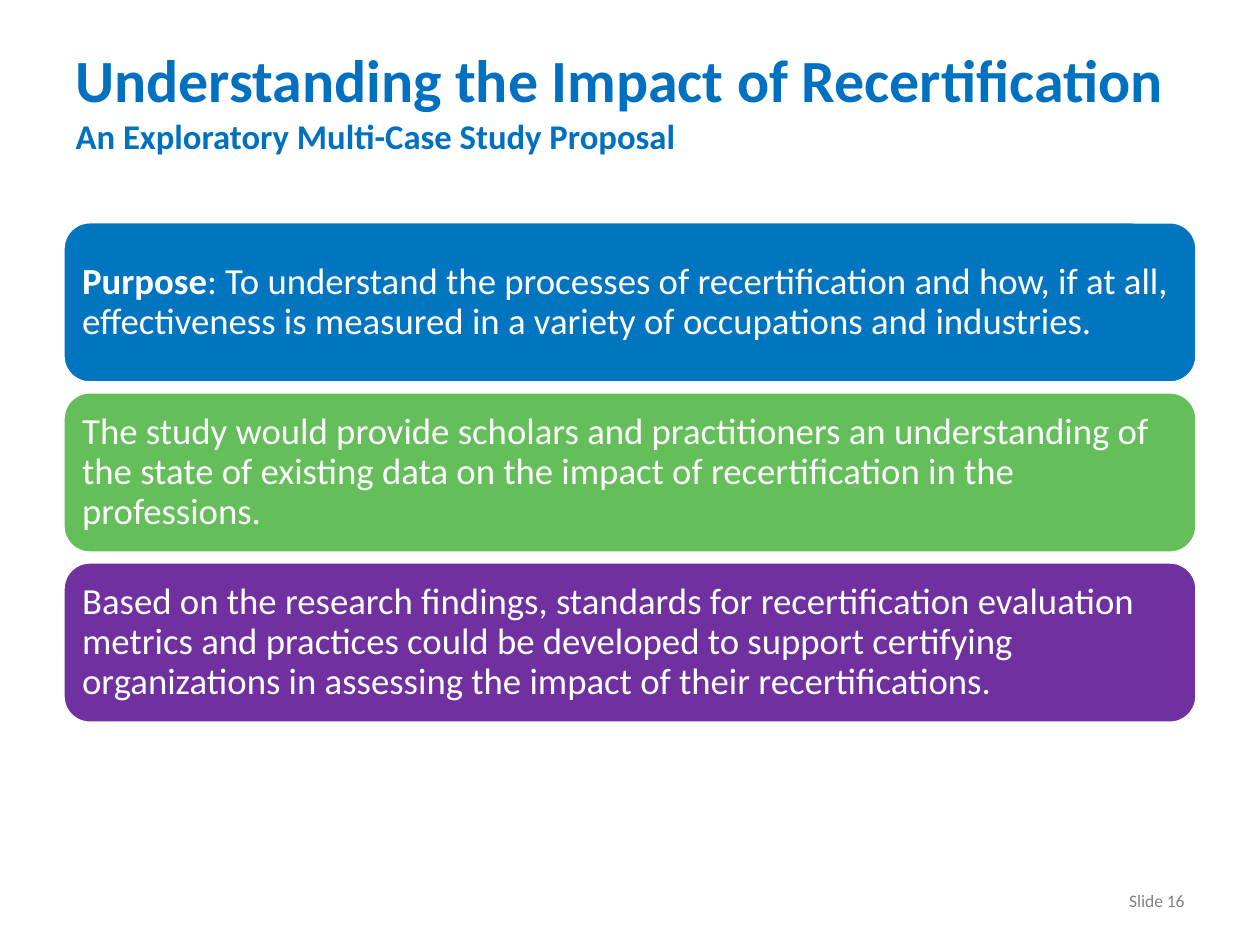
"""Build the slide that proposes a multi-case study of recertification."""
import pptx
import pptx.dml.color
import pptx.enum.shapes
import pptx.enum.text
import pptx.util

Inches = pptx.util.Inches
Anchor = pptx.enum.text.MSO_ANCHOR
Align = pptx.enum.text.PP_ALIGN

COLORS = {"title": "0070C0", "number": "808080", "white": "FFFFFF",
          "purpose": "0175C0", "understanding": "64BE5A", "standards": "7030A0"}

PANELS = [
    ("purpose", [
        ("Purpose", True),
        (": To understand the processes of recertification and how, if at all, "
         "effectiveness is measured in a variety of occupations and industries.", False)]),
    ("understanding", [
        ("The study would provide scholars and practitioners an understanding of "
         "the state of existing data on the impact of recertification in the "
         "professions.", False)]),
    ("standards", [
        ("Based on the research findings, standards for recertification evaluation "
         "metrics and practices could be developed to support certifying "
         "organizations in assessing the impact of their recertifications.", False)]),
]
PANEL_TOP, PANEL_HEIGHT, PANEL_PITCH = 1.76, 1.28, 1.35


def color(name):
    return pptx.dml.color.RGBColor.from_string(COLORS[name])


def apply_format(target, values):
    for name, value in values.items():
        setattr(target, name, value)


def add_run(paragraph, text, size, color_name, bold=False):
    run = paragraph.add_run()
    run.text = text
    apply_format(run.font, {"name": "Calibri", "size": pptx.util.Pt(size), "bold": bold})
    run.font.color.rgb = color(color_name)


def add_title(slide):
    title = slide.shapes.title
    apply_format(title, {"left": Inches(0.5), "top": Inches(0.3),
                         "width": Inches(9), "height": Inches(1.25)})
    apply_format(title.text_frame, {
        "vertical_anchor": Anchor.TOP, "margin_top": Inches(0.04), "word_wrap": True,
        "auto_size": pptx.enum.text.MSO_AUTO_SIZE.NONE})
    paragraph = title.text_frame.paragraphs[0]
    paragraph.alignment = Align.LEFT
    add_run(paragraph, "Understanding the Impact of Recertification", 34.2, "title", True)
    paragraph.add_line_break()
    add_run(paragraph, "An Exploratory Multi-Case Study Proposal", 19.8, "title", True)


def add_panel(slide, top, color_name, pieces):
    panel = slide.shapes.add_shape(
        pptx.enum.shapes.MSO_SHAPE.ROUNDED_RECTANGLE,
        Inches(0.5), Inches(top), Inches(9), Inches(PANEL_HEIGHT))
    panel.shadow.inherit = False
    panel.fill.solid()
    panel.fill.fore_color.rgb = color(color_name)
    panel.line.color.rgb = color("white")
    panel.line.width = pptx.util.Pt(2)
    margins = {f"margin_{side}": Inches(0.09) for side in ("left", "top", "right", "bottom")}
    apply_format(panel.text_frame,
                 {"word_wrap": True, "vertical_anchor": Anchor.MIDDLE, **margins})
    paragraph = panel.text_frame.paragraphs[0]
    apply_format(paragraph, {"alignment": Align.LEFT, "line_spacing": 0.9})
    for text, bold in pieces:
        add_run(paragraph, text, 21, "white", bold)


def add_slide_number(slide):
    box = slide.shapes.add_textbox(Inches(7.17), Inches(6.95), Inches(2.33), Inches(0.4))
    apply_format(box.text_frame, {"word_wrap": True, "vertical_anchor": Anchor.MIDDLE})
    paragraph = box.text_frame.paragraphs[0]
    paragraph.alignment = Align.RIGHT
    add_run(paragraph, "Slide 16", 10, "number")


def main():
    presentation = pptx.Presentation()
    apply_format(presentation, {"slide_width": Inches(10), "slide_height": Inches(7.5)})
    slide = presentation.slides.add_slide(presentation.slide_layouts[5])
    add_title(slide)
    add_slide_number(slide)
    for index, (color_name, pieces) in enumerate(PANELS):
        add_panel(slide, PANEL_TOP + index * PANEL_PITCH, color_name, pieces)
    presentation.save("out.pptx")


if __name__ == "__main__":
    main()
